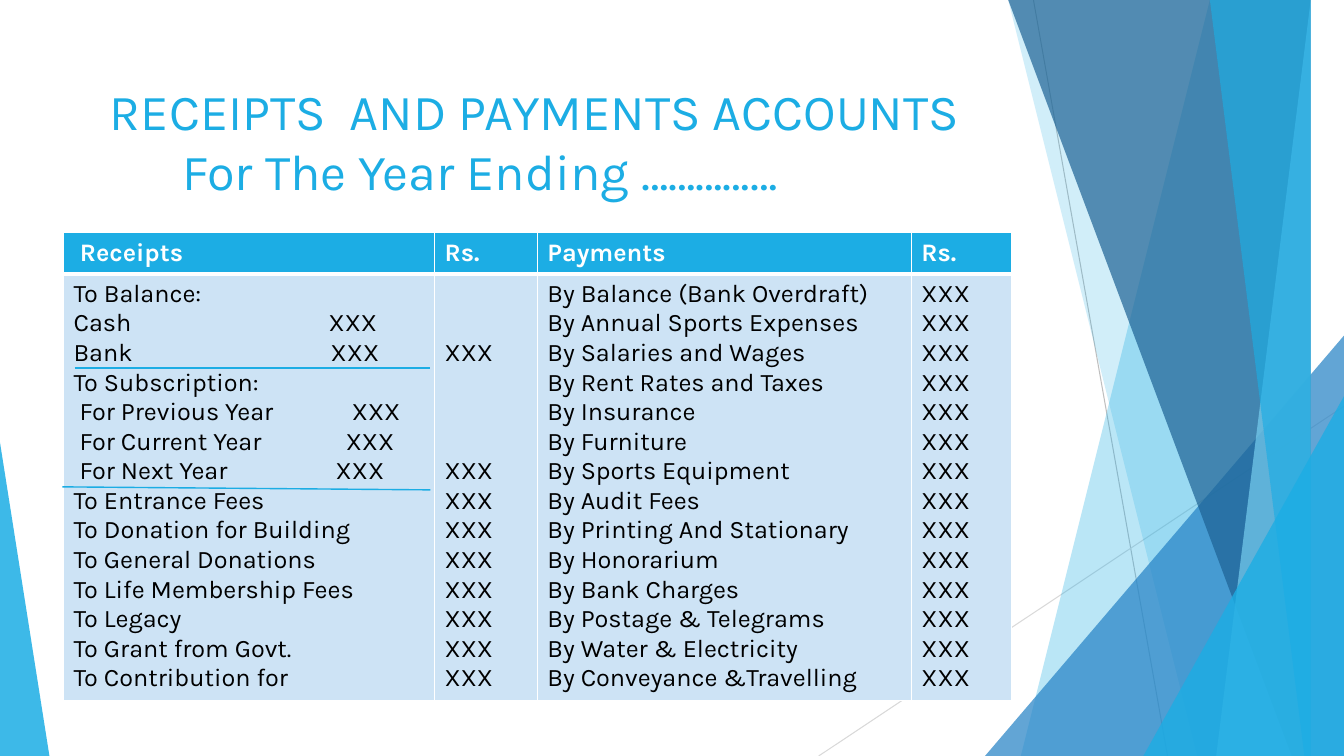
from lxml import etree
from pptx import Presentation
from pptx import util as u
from pptx.dml.color import RGBColor
from pptx.enum import shapes, text
from pptx.oxml.ns import qn

W, H = 13.33, 7.5
FONT = "Karla"
BLUE, WHITE, BLACK, PALE = "1CADE4", "FFFFFF", "000000", "CDE3F5"
LINE_PT = 21.13  # height of one 18 pt table line

# Title lines with their indents
TITLE = [("RECEIPTS  AND PAYMENTS ACCOUNTS", 0.25),
         ("For The Year Ending ……………", 0.97)]

# Table content: amounts name the line they stand on
HEADS = [" Receipts", "Rs.", "Payments", "Rs."]
AMOUNT = "XXX"
RECEIPTS = [  # label, tab stop of an inner amount, amount in the Rs. column
    ("To Balance:", None, False),
    ("Cash", 2.53, False),
    ("Bank", 2.55, True),
    ("To Subscription:", None, False),
    (" For Previous Year", 2.76, False),
    (" For Current Year", 2.7, False),
    (" For Next Year", 2.6, True),
    ("To Entrance Fees", None, True),
    ("To Donation for Building", None, True),
    ("To General Donations", None, True),
    ("To Life Membership Fees", None, True),
    ("To Legacy", None, True),
    ("To Grant from Govt.", None, True),
    ("To Contribution for", None, True),
]
PAYMENTS = [
    "By Balance (Bank Overdraft)", "By Annual Sports Expenses",
    "By Salaries and Wages", "By Rent Rates and Taxes", "By Insurance",
    "By Furniture", "By Sports Equipment", "By Audit Fees",
    "By Printing And Stationary", "By Honorarium", "By Bank Charges",
    "By Postage & Telegrams", "By Water & Electricity",
    "By Conveyance &Travelling",
]
COLS, ROWS = [3.68, 1.02, 3.71, 0.99], [0.41, 4.23]
TABLE_AT = (0.63, 2.31)

# Background: thin lines, then facets from back to front
BACK_LINES = [((10.25, 0), (W - 1.75, H), "BFBFBF", 0.75),
              ((W, 4.03), (8.12, H), "D9D9D9", 0.75)]
SUBTOTAL_LINES = [((0.74, 3.65), (4.27, 3.65), BLUE, 1),
                  ((0.62, 4.83), (4.27, 4.86), BLUE, 1)]
FACETS = [  # "band": top x, bottom x; "peak": left, top, width, apex share
    ("band", (12.28, 10.04), BLUE, 30),
    ("band", (10.5, 11.83), BLUE, 20),
    ("peak", (9.77, 3.33, 3.56, 1), "2683C6", 72),
    ("band", (10.21, 12.91), "1D6294", 70),
    ("band", (13.03, 11.92), "77CEEF", 70),
    ("band", (11.96, 13.18), BLUE, 65),
    ("peak", (11.34, 3.93, 1.99, 1), BLUE, 80),
    ("peak", (0, 4.39, 0.49, 0), BLUE, 85),
]


def rgb(hex_colour):
    return RGBColor.from_string(hex_colour)


def sub(parent, tag, **attrs):
    return etree.SubElement(parent, qn(tag), attrs)


def add_line(s, start, end, colour, width):
    c = s.shapes.add_connector(shapes.MSO_CONNECTOR.STRAIGHT,
                               *(u.Inches(v) for v in start + end))
    c.line.color.rgb, c.line.width = rgb(colour), u.Pt(width)
    sub(c._element.spPr, "a:effectLst")


def add_facet(s, kind, geometry, colour, alpha):
    if kind == "band":
        top, bottom = geometry
        fb = s.shapes.build_freeform(top, 0, scale=u.Inches(1))
        fb.add_line_segments([(W, 0), (W, H), (bottom, H)])
        sp = fb.convert_to_shape()
    else:
        x, y, w, apex = geometry
        sp = s.shapes.add_shape(shapes.MSO_SHAPE.ISOSCELES_TRIANGLE,
                                *(u.Inches(v) for v in (x, y, w, H - y)))
        sp.adjustments[0] = apex
    sp.shadow.inherit = False
    sp.fill.solid()
    sp.fill.fore_color.rgb = rgb(colour)
    sp.line.fill.background()
    sub(sp.fill._xPr.find(".//" + qn("a:srgbClr")), "a:alpha", val=str(alpha * 1000))


def write(p, words, size, colour, bold=False):
    r = p.add_run()
    r.text = words
    r.font.color.rgb = rgb(colour)
    for name, value in {"name": FONT, "size": u.Pt(size), "bold": bold}.items():
        setattr(r.font, name, value)


def style_cell(cell, fill, bottom):
    tcPr = cell._tc.get_or_add_tcPr()
    for side, width in (("L", 1), ("R", 1), ("T", 1), ("B", bottom)):
        ln = sub(tcPr, f"a:ln{side}", w=str(u.Pt(width)))
        sub(sub(ln, "a:solidFill"), "a:srgbClr", val=WHITE)
    cell.fill.solid()
    cell.fill.fore_color.rgb = rgb(fill)


def fill_cell(cell, lines):
    """Lines are (row number, words, tab stop); skipped rows become spacing."""
    cell.margin_top = u.Inches(0.05) + u.Pt(lines[0][0] * LINE_PT)
    previous = lines[0][0] - 1
    for i, (row, words, tab) in enumerate(lines):
        p = cell.text_frame.add_paragraph() if i else cell.text_frame.paragraphs[0]
        if i and row - previous > 1:
            p.space_before = u.Pt((row - previous - 1) * LINE_PT)
        if tab:
            tabs = sub(p._p.get_or_add_pPr(), "a:tabLst")
            sub(tabs, "a:tab", pos=str(u.Inches(tab)), algn="l")
            words += "\t" + AMOUNT
        write(p, words, 18, BLACK)
        previous = row


prs = Presentation()
prs.slide_width, prs.slide_height = u.Inches(W), u.Inches(H)
s = prs.slides.add_slide(prs.slide_layouts[5])

# Background
for line in BACK_LINES:
    add_line(s, *line)
for facet in FACETS:
    add_facet(s, *facet)

# Title, in front of the background
title = s.shapes.title
s.shapes._spTree.append(title._element)
for name, value in zip(("left", "top", "width", "height"), (0.74, 0.67, 9.4, 1.44)):
    setattr(title, name, u.Inches(value))
tf = title.text_frame
tf.auto_size = text.MSO_AUTO_SIZE.NONE
tf.vertical_anchor = text.MSO_ANCHOR.MIDDLE
for i, (words, indent) in enumerate(TITLE):
    p = tf.add_paragraph() if i else tf.paragraphs[0]
    p.alignment = text.PP_ALIGN.LEFT
    p._p.get_or_add_pPr().set("marL", str(u.Inches(indent)))
    write(p, words, 36, BLUE)

# Account table
table = s.shapes.add_table(len(ROWS), len(COLS), *(
    u.Inches(v) for v in TABLE_AT + (sum(COLS), sum(ROWS)))).table
for row, height in zip(table.rows, ROWS):
    row.height = u.Inches(height)
body = [
    [(i, label, tab) for i, (label, tab, _) in enumerate(RECEIPTS)],
    [(i, AMOUNT, None) for i, (_, _, paid) in enumerate(RECEIPTS) if paid],
    [(i, label, None) for i, label in enumerate(PAYMENTS)],
    [(i, AMOUNT, None) for i in range(len(PAYMENTS))],
]
for c, (width, head, lines) in enumerate(zip(COLS, HEADS, body)):
    table.columns[c].width = u.Inches(width)
    style_cell(table.cell(0, c), BLUE, 3)
    write(table.cell(0, c).text_frame.paragraphs[0], head, 18, WHITE, True)
    style_cell(table.cell(1, c), PALE, 1)
    fill_cell(table.cell(1, c), lines)

# Subtotal rules
for line in SUBTOTAL_LINES:
    add_line(s, *line)

prs.save("out.pptx")
